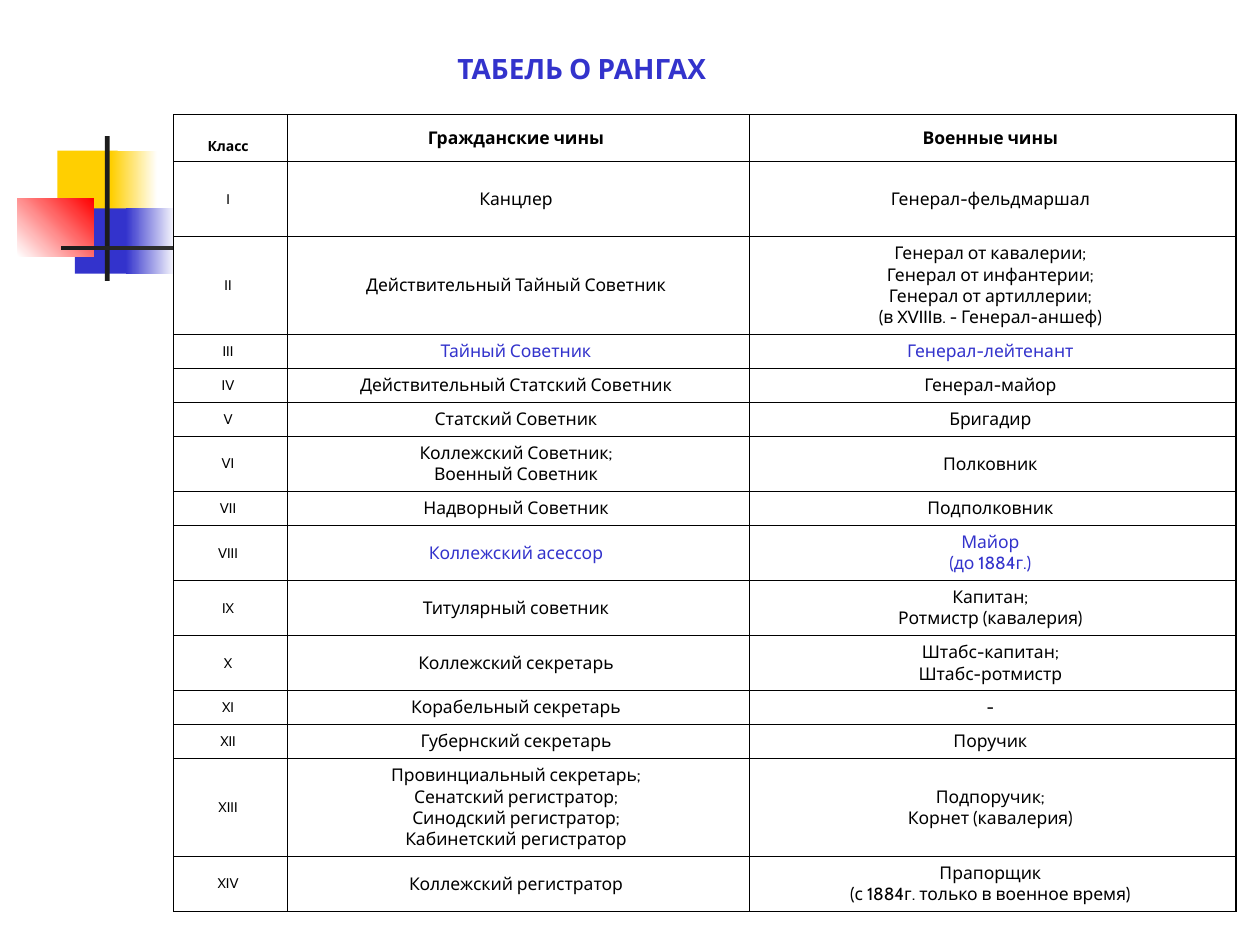
import copy
import dataclasses

import pptx
import pptx.dml.color
import pptx.enum.shapes
import pptx.enum.text
import pptx.oxml
import pptx.oxml.ns
import pptx.util

COLORS = {
    "accent": "3333CC",
    "text": "000000",
    "paper": "FFFFFF",
    "yellow": "FFCF01",
    "red": "FF0000",
    "bar": "1C1C1C",
}
FONT = "Cabin"

HEADINGS = ("Класс", "Гражданские чины", "Военные чины")
RANKS = [
    ("I", "Канцлер", "Генерал-фельдмаршал"),
    ("II", "Действительный Тайный Советник",
     "Генерал от кавалерии;\vГенерал от инфантерии;\v"
     "Генерал от артиллерии;\v(в XVIIIв. - Генерал-аншеф)"),
    ("III", "Тайный Советник", "Генерал-лейтенант"),
    ("IV", "Действительный Статский Советник", "Генерал-майор"),
    ("V", "Статский Советник", "Бригадир"),
    ("VI", "Коллежский Советник;\vВоенный Советник", "Полковник"),
    ("VII", "Надворный Советник", "Подполковник"),
    ("VIII", "Коллежский асессор", "Майор\v(до 1884г.)"),
    ("IX", "Титулярный советник", "Капитан;\vРотмистр (кавалерия)"),
    ("X", "Коллежский секретарь", "Штабс-капитан;\vШтабс-ротмистр"),
    ("XI", "Корабельный секретарь", "-"),
    ("XII", "Губернский секретарь", "Поручик"),
    ("XIII",
     "Провинциальный секретарь;\vСенатский регистратор;\v"
     "Синодский регистратор;\vКабинетский регистратор",
     "Подпоручик;\vКорнет (кавалерия)"),
    ("XIV", "Коллежский регистратор",
     "Прапорщик\v(с 1884г. только в военное время)"),
]
HIGHLIGHTED = {"III", "VIII"}
COLUMN_WIDTHS = (0.9, 3.67, 3.86)
HEADING_HEIGHT = 0.37
FIRST_RANK_HEIGHT = 0.6
HEIGHT_BY_LINES = {1: 0.27, 2: 0.43, 4: 0.77}


@dataclasses.dataclass
class Box:
    left: float
    top: float
    width: float
    height: float

    def share(self, x, y, width, height):
        return Box(self.left + x * self.width, self.top + y * self.height,
                   width * self.width, height * self.height)

    def emu(self):
        return [pptx.util.Inches(v) for v in dataclasses.astuple(self)]


def rgb(name):
    return pptx.dml.color.RGBColor.from_string(COLORS[name])


def format_text(paragraph, size, color, bold, alignment):
    paragraph.alignment = alignment
    for run in paragraph.runs:
        run.font.name = FONT
        run.font.size = pptx.util.Pt(size)
        run.font.bold = bold
        run.font.color.rgb = rgb(color)
    for line_break in paragraph._p.findall(pptx.oxml.ns.qn("a:br")):
        line_break.append(copy.deepcopy(paragraph.runs[0]._r.rPr))


def add_block(slide, box, start, end=None, angle=0):
    block = slide.shapes.add_shape(
        pptx.enum.shapes.MSO_SHAPE.RECTANGLE, *box.emu())
    block.shadow.inherit = False
    block.line.fill.background()
    if end is None:
        block.fill.solid()
        block.fill.fore_color.rgb = rgb(start)
        return
    block.fill.gradient()
    block.fill.gradient_angle = angle
    for stop, color in zip(block.fill.gradient_stops, (start, end)):
        stop.color.rgb = rgb(color)


def add_ornament(slide, box):
    add_block(slide, box.share(0.25, 0.1, 0.38, 0.45), "yellow")
    add_block(slide, box.share(0.59, 0.1, 0.29, 0.45), "yellow", "paper")
    add_block(slide, box.share(0.36, 0.5, 0.37, 0.45), "accent")
    add_block(slide, box.share(0.68, 0.5, 0.32, 0.45), "accent", "paper")
    add_block(slide, box.share(0, 0.43, 0.48, 0.4), "paper", "red", 45)
    add_block(slide, box.share(0.55, 0, 0.03, 1), "bar")
    add_block(slide, box.share(0.27, 0.76, 7.14, 0.03), "bar", "paper")


def add_heading(slide, box):
    heading = slide.shapes.title
    heading.left, heading.top, heading.width, heading.height = box.emu()
    frame = heading.text_frame
    frame.text = "ТАБЕЛЬ О РАНГАХ"
    frame.word_wrap = True
    frame.auto_size = pptx.enum.text.MSO_AUTO_SIZE.NONE
    frame.vertical_anchor = pptx.enum.text.MSO_ANCHOR.MIDDLE
    frame.margin_left = pptx.util.Inches(1.54)
    format_text(frame.paragraphs[0], 16, "accent", True,
                pptx.enum.text.PP_ALIGN.LEFT)


def add_borders(cell):
    properties = cell._tc.get_or_add_tcPr()
    for side in "LRTB":
        properties.append(pptx.oxml.parse_xml(
            f'<a:ln{side} {pptx.oxml.ns.nsdecls("a")} w="9525"><a:solidFill>'
            f'<a:srgbClr val="{COLORS["text"]}"/></a:solidFill></a:ln{side}>'))


def fill_cell(cell, text, size, color, bold):
    add_borders(cell)
    cell.fill.solid()
    cell.fill.fore_color.rgb = rgb("paper")
    cell.vertical_anchor = pptx.enum.text.MSO_ANCHOR.MIDDLE
    cell.margin_right = pptx.util.Inches(0.14)
    paragraph = cell.text_frame.paragraphs[0]
    paragraph.text = text
    format_text(paragraph, size, color, bold, pptx.enum.text.PP_ALIGN.CENTER)


def row_heights():
    lines = [max(text.count("\v") + 1 for text in rank) for rank in RANKS]
    return [HEADING_HEIGHT, FIRST_RANK_HEIGHT,
            *(HEIGHT_BY_LINES[count] for count in lines[1:])]


def add_rank_table(slide, box):
    rows = [HEADINGS, *RANKS]
    ranks = slide.shapes.add_table(
        len(rows), len(HEADINGS), *box.emu()).table
    ranks.first_row = False
    ranks.horz_banding = False
    for column, width in zip(ranks.columns, COLUMN_WIDTHS):
        column.width = pptx.util.Inches(box.width * width / sum(COLUMN_WIDTHS))
    heights = row_heights()
    for row, height in zip(ranks.rows, heights):
        row.height = pptx.util.Inches(box.height * height / sum(heights))
    for r, texts in enumerate(rows):
        for c, text in enumerate(texts):
            highlighted = c > 0 and texts[0] in HIGHLIGHTED
            fill_cell(ranks.cell(r, c), text, 10 if c else 8,
                      "accent" if highlighted else "text", r == 0)
    ranks.cell(0, 0).vertical_anchor = pptx.enum.text.MSO_ANCHOR.BOTTOM


def main():
    deck = pptx.Presentation()
    deck.slide_width = pptx.util.Inches(10)
    deck.slide_height = pptx.util.Inches(7.5)
    slide = deck.slides.add_slide(deck.slide_layouts.get_by_name("Title Only"))
    add_ornament(slide, Box(0.14, 1.08, 1.26, 1.15))
    add_heading(slide, Box(2.09, 0.36, 7.4, 0.37))
    add_rank_table(slide, Box(1.38, 0.91, 8.43, 6.28))
    deck.save("out.pptx")


if __name__ == "__main__":
    main()
